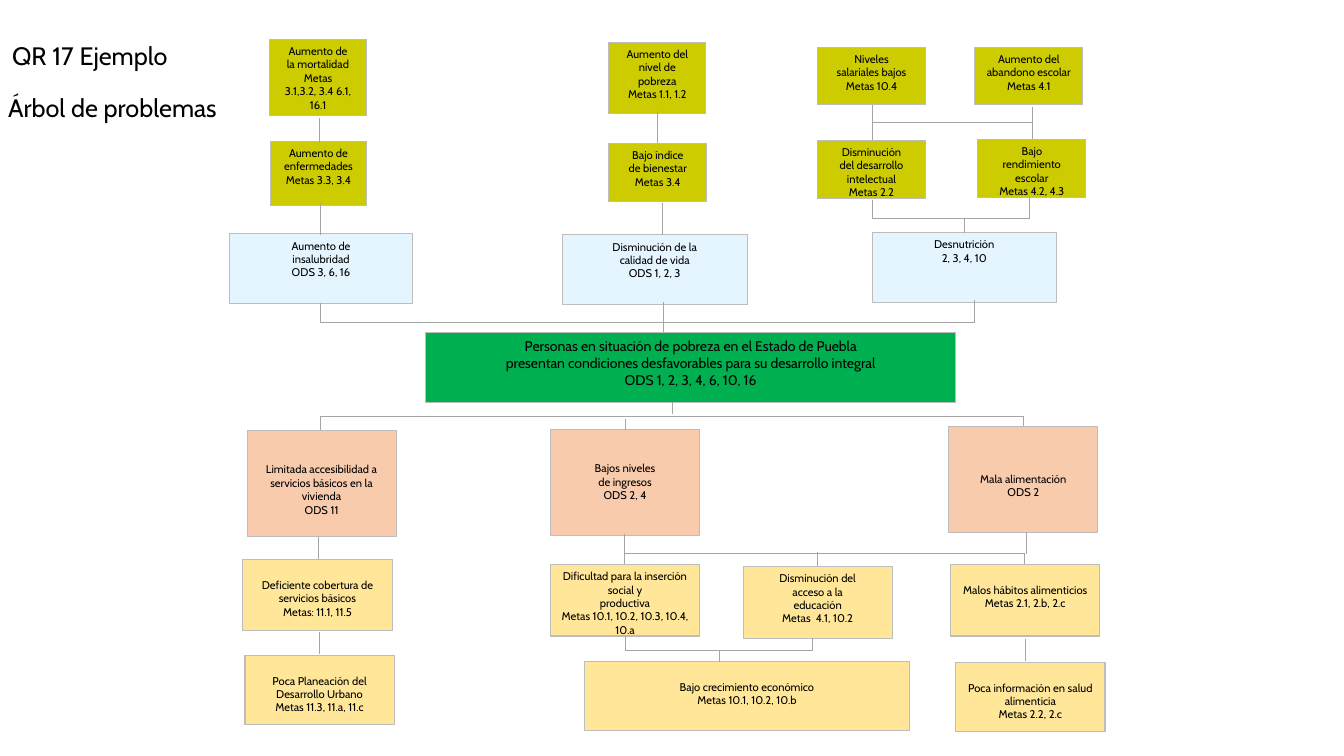
import itertools
from dataclasses import dataclass

import pptx
import pptx.dml.color
import pptx.enum.shapes
import pptx.enum.text
import pptx.oxml.ns
import pptx.util

Inches = pptx.util.Inches
Pt = pptx.util.Pt


@dataclass(frozen=True)
class Theme:
    font: str = "Cabin"
    text: str = "000000"
    impact: str = "CCCC00"
    effect: str = "E5F5FF"
    problem: str = "00B050"
    cause: str = "F8CBAD"
    root: str = "FFE699"
    border: str = "BDBDBD"
    connector: str = "A5A5A5"
    heading_size: float = 18
    problem_size: float = 10
    box_size: float = 8
    border_width: float = 0.75
    connector_width: float = 0.5
    inset: float = 0.05
    line_height: float = 0.135


@dataclass(frozen=True)
class Region:
    left: float
    top: float
    width: float
    height: float


THEME = Theme()


def color(value):
    return pptx.dml.color.RGBColor.from_string(value)


def write_lines(text_frame, lines, size, alignment):
    text_frame.vertical_anchor = pptx.enum.text.MSO_ANCHOR.TOP
    for index, line in enumerate(lines):
        paragraph = text_frame.paragraphs[0] if index == 0 else text_frame.add_paragraph()
        paragraph.alignment = alignment
        run = paragraph.add_run()
        run.text = line
        run.font.name = THEME.font
        run.font.size = Pt(size)
        run.font.color.rgb = color(THEME.text)


def add_box(slide, region, box, fill, lines, lowered=0, size=THEME.box_size):
    left, top, width, height = box
    shape = slide.shapes.add_shape(
        pptx.enum.shapes.MSO_SHAPE.RECTANGLE,
        Inches(region.left + left), Inches(region.top + top), Inches(width), Inches(height))
    shape.shadow.inherit = False
    shape.fill.solid()
    shape.fill.fore_color.rgb = color(fill)
    shape.line.color.rgb = color(THEME.border)
    shape.line.width = Pt(THEME.border_width)
    text_frame = shape.text_frame
    text_frame.word_wrap = True
    text_frame.margin_top = Inches(THEME.inset + lowered * THEME.line_height)
    write_lines(text_frame, lines, size, pptx.enum.text.PP_ALIGN.CENTER)


def add_branch(slide, region, *points):
    for start, end in itertools.pairwise(points):
        connector = slide.shapes.add_connector(
            pptx.enum.shapes.MSO_CONNECTOR.STRAIGHT,
            Inches(region.left + start[0]), Inches(region.top + start[1]),
            Inches(region.left + end[0]), Inches(region.top + end[1]))
        connector.line.color.rgb = color(THEME.connector)
        connector.line.width = Pt(THEME.connector_width)
        properties = connector._element.spPr
        properties.append(properties.makeelement(pptx.oxml.ns.qn("a:effectLst"), {}))


def add_stems(slide, region, stems):
    for x, top, bottom in stems:
        add_branch(slide, region, (x, top), (x, bottom))


def add_fork(slide, region, left, right, start, bar, end):
    add_branch(slide, region, (left, start), (left, bar), (right, bar), (right, end))


def add_heading(slide, region):
    subtitle = slide.shapes.add_textbox(0, 0, 0, 0)
    for shape, left, top, text in (
            (slide.shapes.title, 0.1, 0, "QR 17 Ejemplo"),
            (subtitle, 0.06, 0.52, "Árbol de problemas")):
        shape.left, shape.top = Inches(region.left + left), Inches(region.top + top)
        shape.width, shape.height = Inches(region.width), Inches(region.height)
        text_frame = shape.text_frame
        text_frame.auto_size = pptx.enum.text.MSO_AUTO_SIZE.NONE
        text_frame.word_wrap = False
        text_frame.margin_left = text_frame.margin_right = 0
        text_frame.margin_top = text_frame.margin_bottom = Inches(THEME.inset)
        write_lines(text_frame, [text], THEME.heading_size, pptx.enum.text.PP_ALIGN.LEFT)


def add_effects(slide, region):
    impacts = [
        ((0.67, 0.39, 0.97, 0.76),
         ["Aumento de", "la mortalidad", "Metas", "3.1,3.2, 3.4 6.1, 16.1"]),
        ((4.04, 0.42, 0.96, 0.71), ["Aumento del", "nivel de pobreza", "Metas 1.1, 1.2"]),
        ((6.11, 0.47, 1.07, 0.57), ["Niveles", "salariales bajos", "Metas 10.4"]),
        ((7.67, 0.47, 1.07, 0.57), ["Aumento del", "abandono escolar", "Metas 4.1"]),
        ((0.68, 1.4, 0.96, 0.64), ["Aumento de", "enfermedades", "Metas 3.3, 3.4"]),
        ((4.04, 1.42, 0.97, 0.58), ["Bajo índice", "de bienestar", "Metas 3.4"]),
        ((6.11, 1.39, 1.07, 0.58),
         ["Disminución", "del desarrollo", "intelectual", "Metas 2.2"]),
        ((7.7, 1.38, 1.07, 0.58), ["Bajo", "rendimiento", "escolar", "Metas 4.2, 4.3"]),
    ]
    effects = [
        ((0.28, 2.32, 1.81, 0.69), ["Aumento de", "insalubridad", "ODS 3, 6, 16"]),
        ((3.58, 2.33, 1.83, 0.69), ["Disminución de la", "calidad de vida", "ODS 1, 2, 3"]),
        ((6.65, 2.31, 1.83, 0.69), ["Desnutrición", "2, 3, 4, 10"]),
    ]
    for fill, boxes in ((THEME.impact, impacts), (THEME.effect, effects)):
        for box, lines in boxes:
            add_box(slide, region, box, fill, lines)
    add_fork(slide, region, 6.65, 8.24, 1.04, 1.21, 1.38)
    add_fork(slide, region, 6.65, 8.21, 1.98, 2.17, 1.94)
    add_fork(slide, region, 1.18, 7.66, 3.01, 3.2, 2.98)
    add_stems(slide, region, [
        (1.17, 1.17, 1.42), (4.52, 1.1, 1.42), (6.65, 1.21, 1.39), (8.24, 1.06, 1.28),
        (1.18, 2.01, 2.33), (4.57, 2.01, 2.33), (7.56, 2.17, 2.31), (4.58, 3, 3.31)])


def add_problem(slide, region):
    add_box(slide, region, (0, 0, region.width, region.height), THEME.problem,
            ["Personas en situación de pobreza en el Estado de Puebla",
             "presentan condiciones desfavorables para su desarrollo integral",
             "ODS 1, 2, 3, 4, 6, 10, 16"], size=THEME.problem_size)
    add_stems(slide, region, [(2.45, region.height, region.height + 0.12)])


def add_causes(slide, region):
    causes = [
        ((0.45, 0.27, 1.48, 1.05), 2,
         ["Limitada accesibilidad a", "servicios básicos en la vivienda", "ODS 11"]),
        ((3.46, 0.26, 1.48, 1.05), 2, ["Bajos niveles", "de ingresos", "ODS 2, 4"]),
        ((7.41, 0.23, 1.48, 1.05), 3, ["Mala alimentación", "ODS 2"]),
    ]
    roots = [
        ((0.41, 1.55, 1.48, 0.71), 1,
         ["Deficiente cobertura de servicios básicos", "Metas: 11.1, 11.5"]),
        ((3.46, 1.6, 1.48, 0.71), 0,
         ["Dificultad para la inserción social y", "productiva",
          "Metas 10.1, 10.2, 10.3, 10.4, 10.a"]),
        ((5.37, 1.62, 1.48, 0.71), 0,
         ["Disminución del", "acceso a la", "educación", "Metas  4.1, 10.2"]),
        ((7.43, 1.6, 1.48, 0.71), 1, ["Malos hábitos alimenticios", "Metas 2.1, 2.b, 2.c"]),
        ((0.43, 2.5, 1.48, 0.69), 1,
         ["Poca Planeación del Desarrollo Urbano", "Metas 11.3, 11.a, 11.c"]),
        ((3.8, 2.56, 3.22, 0.69), 1, ["Bajo crecimiento económico", "Metas 10.1, 10.2, 10.b"]),
        ((7.48, 2.57, 1.48, 0.69), 1,
         ["Poca información en salud alimenticia", "Metas 2.2, 2.c"]),
    ]
    for fill, boxes in ((THEME.cause, causes), (THEME.root, roots)):
        for box, lowered, lines in boxes:
            add_box(slide, region, box, fill, lines, lowered)
    add_fork(slide, region, 1.18, 8.15, 0.27, 0.13, 0.23)
    add_fork(slide, region, 4.19, 8.16, 1.6, 1.49, 1.6)
    add_fork(slide, region, 4.2, 6.06, 2.31, 2.45, 2.33)
    add_stems(slide, region, [
        (4.2, 0.16, 0.27), (1.16, 1.33, 1.55), (4.19, 1.3, 1.52), (8.18, 1.28, 1.5),
        (6.11, 1.48, 1.62), (1.17, 2.27, 2.49), (8.17, 2.34, 2.56), (5.13, 2.45, 2.57)])


def main():
    presentation = pptx.Presentation()
    presentation.slide_width = Inches(13.33)
    presentation.slide_height = Inches(7.5)
    slide = presentation.slides.add_slide(presentation.slide_layouts.get_by_name("Title Only"))
    add_heading(slide, Region(0.02, 0.35, 2.2, 0.4))
    add_effects(slide, Region(2, 0, 9, 3.3))
    add_problem(slide, Region(4.22, 3.3, 5.26, 0.69))
    add_causes(slide, Region(2, 4, 9, 3.3))
    presentation.save("out.pptx")


if __name__ == "__main__":
    main()
